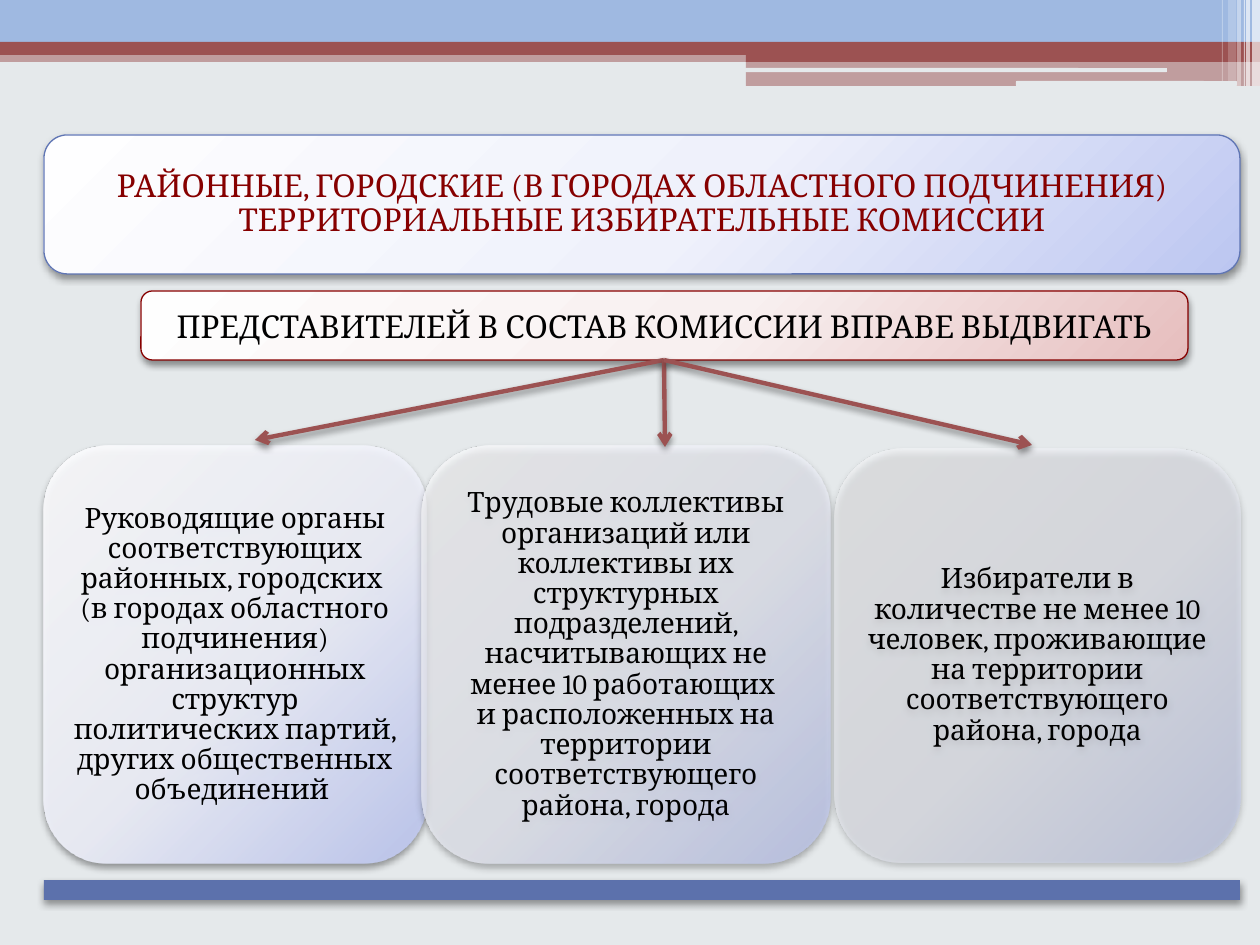
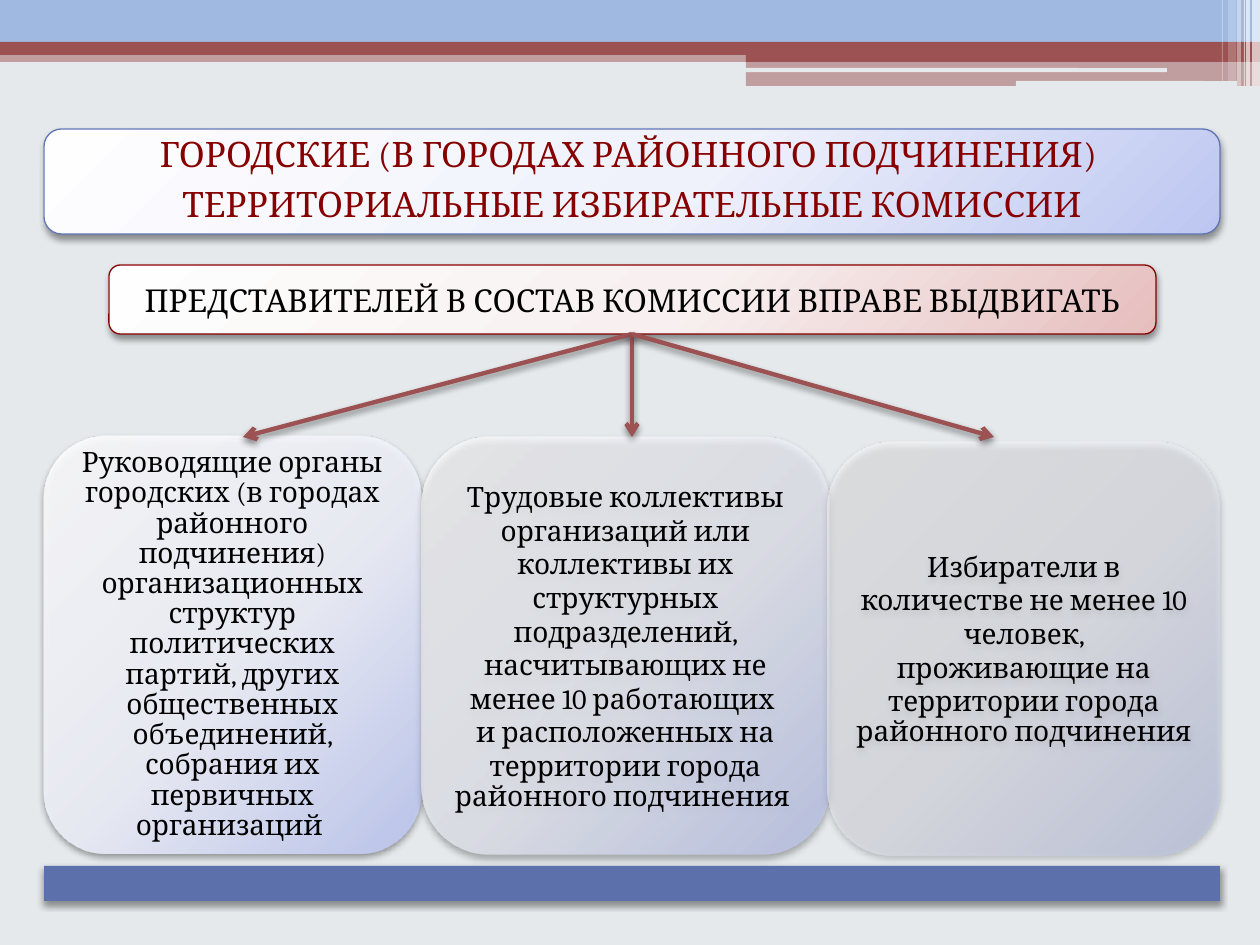
"""Build two slides on who may nominate members of election commissions."""
from dataclasses import dataclass
from typing import Any, NamedTuple

from lxml import etree
from pptx import Presentation
from pptx.dml.color import RGBColor
from pptx.enum.shapes import MSO_CONNECTOR, MSO_SHAPE
from pptx.enum.text import MSO_ANCHOR, MSO_AUTO_SIZE, PP_ALIGN
from pptx.oxml import parse_xml
from pptx.oxml.ns import nsdecls, qn
from pptx.util import Pt

RECT, ROUND = MSO_SHAPE.RECTANGLE, MSO_SHAPE.ROUNDED_RECTANGLE
LINE, CENTER = MSO_CONNECTOR.STRAIGHT, PP_ALIGN.CENTER
MIDDLE, FIXED = MSO_ANCHOR.MIDDLE, MSO_AUTO_SIZE.NONE

PAPER = RGBColor(0xE5, 0xE9, 0xEB)
SKY = RGBColor(0x9F, 0xB9, 0xE1)
BRICK = RGBColor(0x9C, 0x52, 0x52)
WHITE = RGBColor(0xFF, 0xFF, 0xFF)
BLACK = RGBColor(0x00, 0x00, 0x00)
WINE = RGBColor(0x86, 0x00, 0x00)
EDGE = RGBColor(0x60, 0x76, 0xB4)
STEEL = RGBColor(0x5C, 0x71, 0xAC)
BLUES = (RGBColor(0xFE, 0xFE, 0xFF), RGBColor(0xEF, 0xF1, 0xFB), RGBColor(0xBC, 0xC6, 0xF1))
REDS = (RGBColor(0xFE, 0xFE, 0xFE), RGBColor(0xF8, 0xF0, 0xF0), RGBColor(0xE6, 0xBE, 0xBE))
STOPS = (0, 55, 100)
VEILS = (90, 70, 50)

FACE = "Cambria"
PROMPT = "ПРЕДСТАВИТЕЛЕЙ В СОСТАВ КОМИССИИ ВПРАВЕ ВЫДВИГАТЬ"


def px(count: int) -> int:
    """Turn pixels into EMU."""
    return round(count * 914400 / 126)


FRAME = {
    "word_wrap": True, "auto_size": FIXED, "vertical_anchor": MIDDLE,
    "margin_left": px(9), "margin_right": px(9),
    "margin_top": px(9), "margin_bottom": px(9),
}


class Box(NamedTuple):
    """A place on the slide in pixels."""
    left: int
    top: int
    width: int
    height: int


class Band(NamedTuple):
    """A strip of the page header."""
    box: Box
    color: RGBColor
    veil: int = 100
    kind: Any = RECT


@dataclass
class Card:
    """A group that may nominate, with the tip of its arrow."""
    box: Box
    tip: tuple[int, int]
    lines: list[str]


@dataclass
class Page:
    """The content of one slide."""
    head: Box
    title: list[str]
    size: int
    prompt: Box
    cards: list[Card]
    base: Box


BANDS = [
    Band(Box(0, 50, 1260, 12), BRICK, 50),
    Band(Box(0, 0, 1260, 43), SKY),
    Band(Box(0, 42, 1260, 13), BRICK),
    Band(Box(746, 49, 514, 13), BRICK),
    Band(Box(746, 61, 514, 25), BRICK, 50),
    Band(Box(745, 68, 422, 4), PAPER, 100, ROUND),
    Band(Box(1016, 81, 221, 5), PAPER, 100, ROUND),
    Band(Box(1252, 0, 8, 86), WHITE, 65),
    Band(Box(1246, 0, 4, 86), WHITE, 65),
    Band(Box(1244, 0, 1, 86), WHITE, 60),
    Band(Box(1237, 0, 4, 86), WHITE, 40),
    Band(Box(1228, 0, 8, 81), WHITE, 20),
    Band(Box(1222, 0, 1, 81), WHITE, 30),
]

PAGES = [
    Page(
        Box(44, 135, 1196, 139),
        ["РАЙОННЫЕ, ГОРОДСКИЕ (В ГОРОДАХ ОБЛАСТНОГО ПОДЧИНЕНИЯ) "
         "ТЕРРИТОРИАЛЬНЫЕ ИЗБИРАТЕЛЬНЫЕ КОМИССИИ"],
        18,
        Box(141, 291, 1047, 69),
        [
            Card(Box(44, 446, 382, 418), (255, 440), [
                "Руководящие органы соответствующих районных, городских \n"
                "(в городах областного подчинения) организационных структур "
                "политических партий, других общественных объединений "]),
            Card(Box(422, 446, 408, 418), (665, 447), [
                "Трудовые коллективы организаций или коллективы их структурных "
                "подразделений, насчитывающих не менее 10 работающих \n"
                "и расположенных на территории соответствующего района, города"]),
            Card(Box(835, 449, 405, 413), (1032, 445), [
                "Избиратели в количестве не менее 10 человек, проживающие "
                "на территории соответствующего района, города"]),
        ],
        Box(44, 880, 1196, 20),
    ),
    Page(
        Box(44, 129, 1176, 105),
        ["ГОРОДСКИЕ (В ГОРОДАХ РАЙОННОГО ПОДЧИНЕНИЯ) ",
         "ТЕРРИТОРИАЛЬНЫЕ ИЗБИРАТЕЛЬНЫЕ КОМИССИИ"],
        20,
        Box(109, 265, 1047, 69),
        [
            Card(Box(44, 436, 377, 418), (243, 437), [
                "Руководящие органы городских (в городах районного подчинения) "
                "организационных структур политических партий, других "
                "общественных объединений, собрания их первичных организаций "]),
            Card(Box(422, 437, 407, 418), (632, 437), [
                "Трудовые коллективы организаций или коллективы их структурных "
                "подразделений, насчитывающих не менее 10 работающих \n"
                "и расположенных на территории города",
                "районного подчинения "]),
            Card(Box(828, 442, 392, 413), (994, 437), [
                "Избиратели в количестве не менее 10 человек, проживающие "
                "на территории города",
                "районного подчинения"]),
        ],
        Box(44, 866, 1176, 35),
    ),
]


def assign(item: Any, values: dict[str, Any]) -> None:
    """Set each named value on the item."""
    for name, value in values.items():
        setattr(item, name, value)


def draw(slide: Any, kind: Any, box: Box, color: RGBColor) -> Any:
    """Add a flat shape with no outline."""
    shape = slide.shapes.add_shape(kind, *map(px, box))
    shape.shadow.inherit = False
    shape.fill.solid()
    shape.fill.fore_color.rgb = color
    shape.line.fill.background()
    return shape


def fade(shape: Any, veil: int) -> None:
    """Make the fill partly clear."""
    if veil < 100:
        for node in shape.element.spPr.iter(qn("a:srgbClr")):
            etree.SubElement(node, qn("a:alpha"), val=str(veil * 1000))


def shade(item: Any, alpha: int) -> None:
    """Drop a soft shadow below the item."""
    props = item.element.spPr
    effects = props.find(qn("a:effectLst"))
    if effects is None:
        effects = etree.SubElement(props, qn("a:effectLst"))
    effects.append(parse_xml(
        f'<a:outerShdw {nsdecls("a")} blurRad="52000" dist="25400" dir="5400000" '
        f'rotWithShape="0"><a:srgbClr val="{BLACK}"><a:alpha val="{alpha * 1000}"/>'
        '</a:srgbClr></a:outerShdw>'))


def panel(slide: Any, box: Box, tones: tuple[RGBColor, ...], veil: int = 100,
          edge: RGBColor | None = None) -> Any:
    """Add a rounded panel with a glow from its upper left."""
    shape = draw(slide, ROUND, box, tones[0])
    stops = "".join(f'<a:gs pos="{spot * 1000}"><a:srgbClr val="{tone}"/></a:gs>'
                    for spot, tone in zip(STOPS, tones))
    props = shape.element.spPr
    props.replace(props.find(qn("a:solidFill")), parse_xml(
        f'<a:gradFill {nsdecls("a")} rotWithShape="1"><a:gsLst>{stops}</a:gsLst>'
        '<a:path path="circle"><a:fillToRect l="-40000" t="-90000" r="140000" '
        'b="190000"/></a:path></a:gradFill>'))
    fade(shape, veil)
    if edge is not None:
        shape.line.color.rgb = edge
        shape.line.width = Pt(0.75)
    shade(shape, 40)
    return shape


def write(shape: Any, lines: list[str], size: int, color: RGBColor,
          lead: float = 1.0, last: float = 0.9, gap: int = 0) -> None:
    """Fill the shape with centred text."""
    frame = shape.text_frame
    assign(frame, FRAME)
    for place, line in enumerate(lines):
        para = frame.paragraphs[0] if place == 0 else frame.add_paragraph()
        final = place == len(lines) - 1
        para.text = line
        assign(para, {"alignment": CENTER, "line_spacing": last if final else lead,
                      "space_before": Pt(0), "space_after": Pt(0 if final else gap)})
        for run in para.runs:
            assign(run.font, {"name": FACE, "size": Pt(size)})
            run.font.color.rgb = color


def arrow(slide: Any, start: tuple[int, int], tip: tuple[int, int]) -> None:
    """Add an arrow with a shadow."""
    link = slide.shapes.add_connector(LINE, *map(px, start + tip))
    link.line.color.rgb = BRICK
    link.line.width = Pt(2.5)
    etree.SubElement(link.element.spPr.find(qn("a:ln")), qn("a:tailEnd"), type="arrow")
    shade(link, 45)


def dress(layout: Any, slide: Any) -> None:
    """Put the header strips on the shared layout."""
    tree = layout.element.cSld.spTree
    for mark, band in enumerate(BANDS, 20):
        shape = draw(slide, band.kind, band.box, band.color)
        fade(shape, band.veil)
        shape.element.nvSpPr.cNvPr.set("id", str(mark))
        tree.append(shape.element)


def build(slide: Any, page: Page) -> None:
    """Draw one page."""
    head = panel(slide, page.head, BLUES, edge=EDGE)
    title = slide.shapes.title
    head.element.addnext(title.element)
    assign(title, dict(zip(("left", "top", "width", "height"), map(px, page.head))))
    write(title, page.title, page.size, WINE, lead=0.9, gap=7)
    for card, veil in zip(page.cards, VEILS):
        write(panel(slide, card.box, BLUES, veil), card.lines, 16, BLACK)
    shade(draw(slide, RECT, page.base, STEEL), 40)
    box = page.prompt
    write(panel(slide, box, REDS, edge=WINE), [PROMPT], 18, BLACK, last=1.0)
    start = (box.left + box.width // 2, box.top + box.height)
    for card in page.cards:
        arrow(slide, start, card.tip)


def main() -> None:
    """Build and save the deck."""
    deck = Presentation()
    assign(deck, {"slide_width": px(1260), "slide_height": px(945)})
    ground = deck.slide_master.background.fill
    ground.solid()
    ground.fore_color.rgb = PAPER
    layout = deck.slide_layouts[5]
    slides = [deck.slides.add_slide(layout) for _ in PAGES]
    dress(layout, slides[0])
    for slide, page in zip(slides, PAGES):
        build(slide, page)
    deck.save("out.pptx")


if __name__ == "__main__":
    main()
